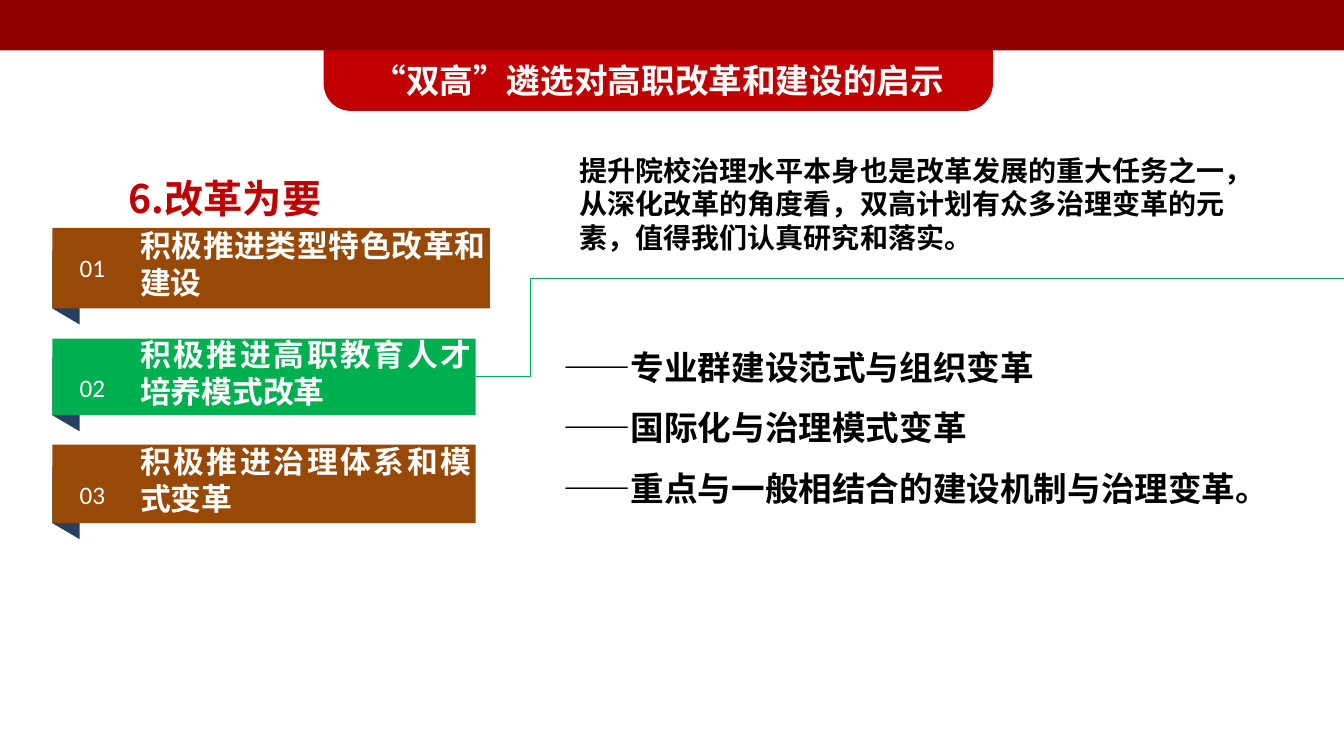
"""Build the slide on what the selection means for vocational college reform."""
from lxml.etree import SubElement
from pptx import Presentation
from pptx.dml.color import RGBColor
from pptx.enum.shapes import MSO_CONNECTOR, MSO_SHAPE
from pptx.enum.text import MSO_ANCHOR, MSO_AUTO_SIZE, PP_ALIGN
from pptx.oxml.ns import qn
from pptx.util import Inches, Pt

CJK, LATIN = "Noto Sans CJK SC", "Calibri"
RED, DARK_RED, BROWN, GREEN = "C00000", "8E0000", "984807", "00B050"
NAVY, WHITE, BLACK = "254061", "FFFFFF", "000000"

TITLE = "“双高”遴选对高职改革和建设的启示"
HEADING = "6.改革为要"
SUMMARY = ("提升院校治理水平本身也是改革发展的重大任务之一，从深化改革的角度看，"
           "双高计划有众多治理变革的元素，值得我们认真研究和落实。")
CHANGES = ["——专业群建设范式与组织变革", "——国际化与治理模式变革",
           "——重点与一般相结合的建设机制与治理变革。"]
RIBBONS = [
    {"number": "01", "text": "积极推进类型特色改革和建设", "fill": BROWN,
     "top": 30.13, "width": 32.55, "height": 10.67, "number_top": 32.67},
    {"number": "02", "text": "积极推进高职教育人才培养模式改革", "fill": GREEN,
     "top": 44.8, "width": 31.5, "height": 10.13, "number_top": 48.53},
    {"number": "03", "text": "积极推进治理体系和模式变革", "fill": BROWN,
     "top": 58.8, "width": 31.5, "height": 10.4, "number_top": 62.67},
]

TOP_BAR = (0, 0, 100, 6.67)
BANNER = (24.08, 3.2, 49.8, 11.47)
TITLE_BOX = (26.7, 7.2, 44.55, 6.67)
HEADING_BOX = (8.85, 19.33, 91, 9.6)
SUMMARY_BOX = (42.38, 19.6, 50.03, 14.8)
CHANGES_BOX = (38.78, 42.53, 57.3, 25.6)
RIBBON_LEFT, NUMBER_WIDTH, NUMBER_HEIGHT = 3.9, 3.83, 5.33
FOLD_WIDTH, FOLD_ABOVE, FOLD_INNER, FOLD_OUTER = 2.03, 7.6, 2.13, 0
RULE_LEFT, RULE_Y = 39.45, 36.85

deck = Presentation()
deck.slide_width, deck.slide_height = Inches(13.33), Inches(7.5)
slide = deck.slides.add_slide(deck.slide_layouts[5])
shapes = slide.shapes


def across(share):
    return round(deck.slide_width * share / 100)


def down(share):
    return round(deck.slide_height * share / 100)


def place(box):
    left, top, width, height = box
    return across(left), down(top), across(width), down(height)


def colour(hex_code):
    return RGBColor.from_string(hex_code)


def paint(shape, fill):
    shape.shadow.inherit = False
    shape.fill.solid()
    shape.fill.fore_color.rgb = colour(fill)
    shape.line.fill.background()
    return shape


def write(shape, text, size=20, color=BLACK, font=CJK, bold=True, align=PP_ALIGN.LEFT,
          anchor=MSO_ANCHOR.TOP, spacing=1.0, insets=(0.1, 0.05, 0.1, 0.05),
          indent=0.0, wrap=True):
    frame = shape.text_frame
    frame.word_wrap, frame.auto_size = wrap, MSO_AUTO_SIZE.NONE
    frame.vertical_anchor = anchor
    (frame.margin_left, frame.margin_top,
     frame.margin_right, frame.margin_bottom) = map(Inches, insets)
    frame.text = text
    for paragraph in frame.paragraphs:
        paragraph.alignment, paragraph.line_spacing = align, spacing
        if indent:
            paragraph._p.get_or_add_pPr().set("marL", str(Inches(indent)))
        for run in paragraph.runs:
            run.font.size, run.font.bold, run.font.name = Pt(size), bold, font
            run.font.color.rgb = colour(color)
            SubElement(run._r.get_or_add_rPr(), qn("a:ea")).set("typeface", font)


def connect(kind, start, end):
    line = shapes.add_connector(kind, across(start[0]), down(start[1]),
                                across(end[0]), down(end[1]))
    line.line.color.rgb, line.line.width = colour(GREEN), Pt(0.75)
    SubElement(line._element.spPr, qn("a:effectLst"))
    return line


def add_ribbon(item):
    bottom = item["top"] + item["height"]
    fold_right = RIBBON_LEFT + FOLD_WIDTH
    corners = [(across(x), down(y)) for x, y in (
        (RIBBON_LEFT, bottom - FOLD_ABOVE), (fold_right, bottom - FOLD_ABOVE),
        (fold_right, bottom + FOLD_INNER), (RIBBON_LEFT, bottom + FOLD_OUTER))]
    fold = shapes.build_freeform(*corners[0])
    fold.add_line_segments(corners[1:], close=True)
    paint(fold.convert_to_shape(), NAVY)
    box = (RIBBON_LEFT, item["top"], item["width"], item["height"])
    ribbon = paint(shapes.add_shape(MSO_SHAPE.RECTANGLE, *place(box)), item["fill"])
    write(ribbon, item["text"], size=22, color=WHITE, align=PP_ALIGN.JUSTIFY,
          anchor=MSO_ANCHOR.MIDDLE, insets=(0.87, 0.04, 0.04, 0.12))
    number_box = (fold_right, item["number_top"], NUMBER_WIDTH, NUMBER_HEIGHT)
    write(shapes.add_textbox(*place(number_box)), item["number"], size=18, color=WHITE,
          font=LATIN, bold=False, anchor=MSO_ANCHOR.MIDDLE, insets=(0, 0.05, 0, 0.05))
    return ribbon


write(shapes.add_textbox(*place(HEADING_BOX)), HEADING, size=28, color=RED, spacing=1.5)

banner = paint(shapes.add_shape(MSO_SHAPE.ROUNDED_RECTANGLE, *place(BANNER)), RED)
banner.adjustments[0] = 0.314
title = shapes.title
title.left, title.top, title.width, title.height = place(TITLE_BOX)
write(title, TITLE, size=24, color=WHITE, align=PP_ALIGN.CENTER,
      anchor=MSO_ANCHOR.MIDDLE, wrap=False)
banner._element.addnext(title._element)
paint(shapes.add_shape(MSO_SHAPE.RECTANGLE, *place(TOP_BAR)), DARK_RED)

ribbons = [add_ribbon(item) for item in RIBBONS]

write(shapes.add_textbox(*place(CHANGES_BOX)), "\n".join(CHANGES), size=24,
      spacing=1.5, indent=0.32)
write(shapes.add_textbox(*place(SUMMARY_BOX)), SUMMARY)

connect(MSO_CONNECTOR.STRAIGHT, (RULE_LEFT, RULE_Y), (100, RULE_Y))
active = RIBBONS[1]
elbow = connect(MSO_CONNECTOR.ELBOW,
                (RIBBON_LEFT + active["width"], active["top"] + active["height"] / 2),
                (RULE_LEFT, RULE_Y))
elbow._element.spPr.find(qn("a:prstGeom")).set("prst", "bentConnector2")
elbow.begin_connect(ribbons[1], 3)

deck.save("out.pptx")
